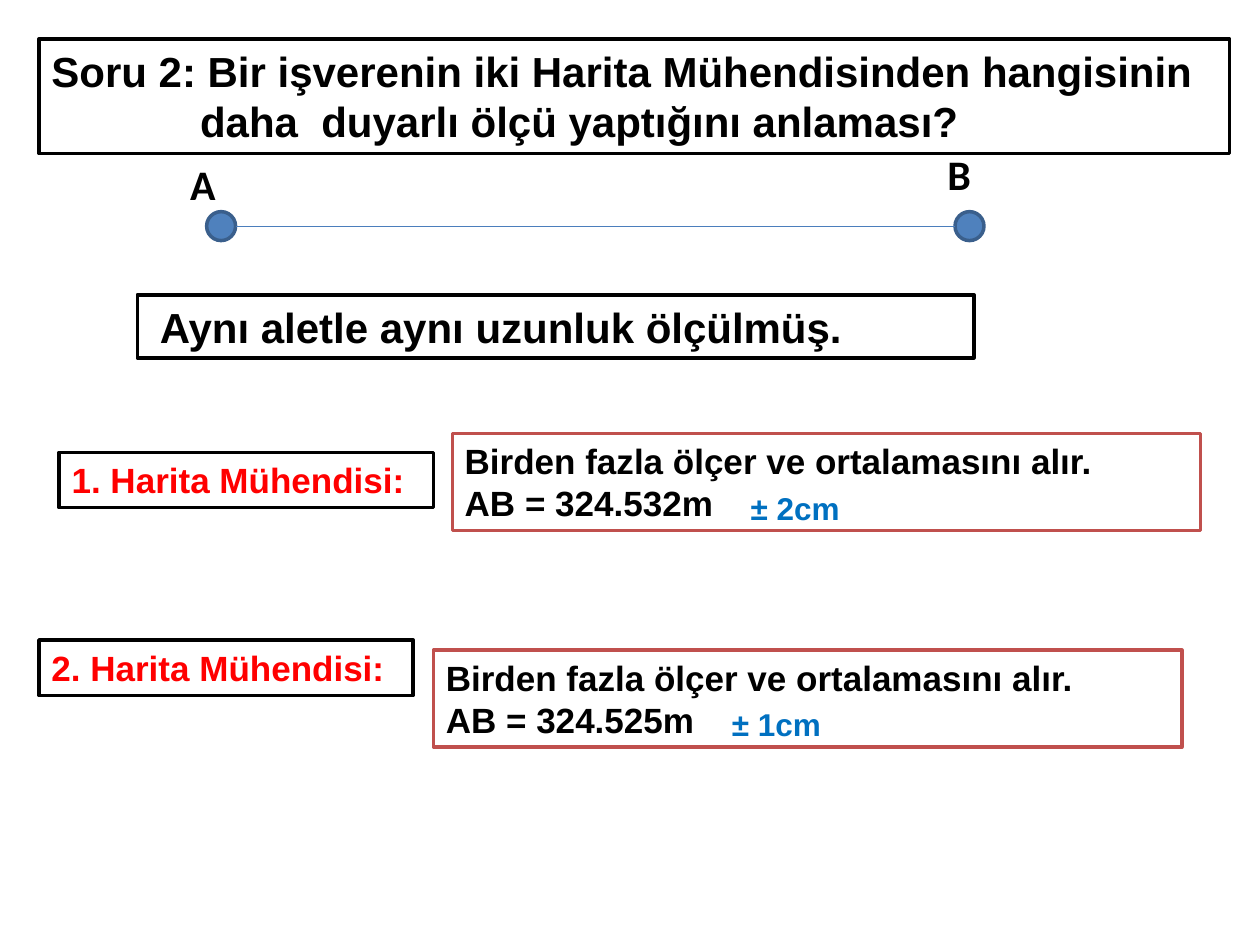
from lxml import etree
from pptx import Presentation
from pptx.dml.color import RGBColor
from pptx.enum.shapes import MSO_CONNECTOR, MSO_SHAPE
from pptx.enum.text import MSO_ANCHOR, PP_ALIGN
from pptx.oxml.ns import qn
from pptx.util import Inches, Pt

STRAIGHT = MSO_CONNECTOR.STRAIGHT
RECTANGLE = MSO_SHAPE.RECTANGLE
POINT = MSO_SHAPE.FLOWCHART_CONNECTOR
TOP = MSO_ANCHOR.TOP
LEFT = PP_ALIGN.LEFT

BLACK, WHITE, RED, BLUE = "000000", "FFFFFF", "FF0000", "0070C0"
RESULT_BORDER = "C0504D"
POINT_FILL, POINT_BORDER, DISTANCE_LINE = "4F81BD", "3A5F8C", "4B7EBC"

POINT_SIZE = 0.23
POINT_TOP = 1.68

# Label position, result position, measured length, tolerance
ENGINEERS = [
    ((0.47, 3.59), (3.59, 3.44), "324.532m", "± 2cm"),
    ((0.31, 5.08), (3.44, 5.16), "324.525m", "± 1cm"),
]


def color(hex_value):
    return RGBColor.from_string(hex_value)


def write(shape, *lines, size=24, font="Arial", ink=BLACK, hanging=0):
    frame = shape.text_frame
    frame.word_wrap = True
    frame.vertical_anchor = TOP
    for index, line in enumerate(lines):
        para = frame.add_paragraph() if index else frame.paragraphs[0]
        para.alignment = LEFT
        if hanging:
            properties = para._p.get_or_add_pPr()
            properties.set("marL", str(Inches(hanging)))
            properties.set("indent", str(-Inches(hanging)))
        span = para.add_run()
        span.text = line
        span.font.size = Pt(size)
        span.font.name = font
        span.font.bold = True
        span.font.color.rgb = color(ink)


def add_shape(page, kind, left, top, width, height, fill, border):
    shape = page.shapes.add_shape(
        kind, Inches(left), Inches(top), Inches(width), Inches(height))
    shape.shadow.inherit = False
    shape.fill.solid()
    shape.fill.fore_color.rgb = color(fill)
    shape.line.color.rgb = color(border)
    shape.line.width = Pt(2)
    return shape


def add_box(page, left, top, width, height, *lines, border=BLACK, **style):
    box = add_shape(page, RECTANGLE, left, top, width, height, WHITE, border)
    write(box, *lines, **style)


def add_label(page, left, top, width, height, text, **style):
    label = page.shapes.add_textbox(
        Inches(left), Inches(top), Inches(width), Inches(height))
    write(label, text, **style)


def add_point(page, left, name, name_left, name_top):
    add_shape(page, POINT, left, POINT_TOP, POINT_SIZE, POINT_SIZE,
              POINT_FILL, POINT_BORDER)
    add_label(page, name_left, name_top, 0.78, 0.5, name, font="Calibri")


def add_distance(page, start, end):
    middle = Inches(POINT_TOP + POINT_SIZE / 2)
    line = page.shapes.add_connector(
        STRAIGHT, Inches(start), middle, Inches(end), middle)
    line.line.color.rgb = color(DISTANCE_LINE)
    line.line.width = Pt(0.75)
    etree.SubElement(line._element.spPr, qn("a:effectLst"))


def add_engineer(page, number, label_at, result_at, length, tolerance):
    add_box(page, *label_at, 2.97, 0.44, f"{number}. Harita Mühendisi:",
            size=20, ink=RED)
    add_box(page, *result_at, 5.94, 0.77,
            "Birden fazla ölçer ve ortalamasını alır.", f"AB = {length}",
            size=20, border=RESULT_BORDER)
    left, top = result_at
    add_label(page, left + 2.27, top + 0.39, 1.17, 0.4, tolerance,
              size=18, ink=BLUE)


def main():
    deck = Presentation()
    deck.slide_width, deck.slide_height = Inches(10), Inches(7.5)
    page = deck.slides.add_slide(deck.slide_layouts[6])

    # Measured distance between A and B
    start, end = 1.64, 7.58
    add_point(page, start, "A", 1.41, 1.21)
    add_point(page, end, "B", 7.42, 1.13)
    add_distance(page, start + POINT_SIZE, end)

    # Question and shared condition
    add_box(page, 0.31, 0.31, 9.45, 0.91,
            "Soru 2: Bir işverenin iki Harita Mühendisinden hangisinin "
            "daha  duyarlı ölçü yaptığını anlaması?", hanging=1.18)
    add_box(page, 1.09, 2.34, 6.64, 0.5, " Aynı aletle aynı uzunluk ölçülmüş.")

    # Results of the two engineers
    for number, engineer in enumerate(ENGINEERS, start=1):
        add_engineer(page, number, *engineer)

    deck.save("out.pptx")


if __name__ == "__main__":
    main()
